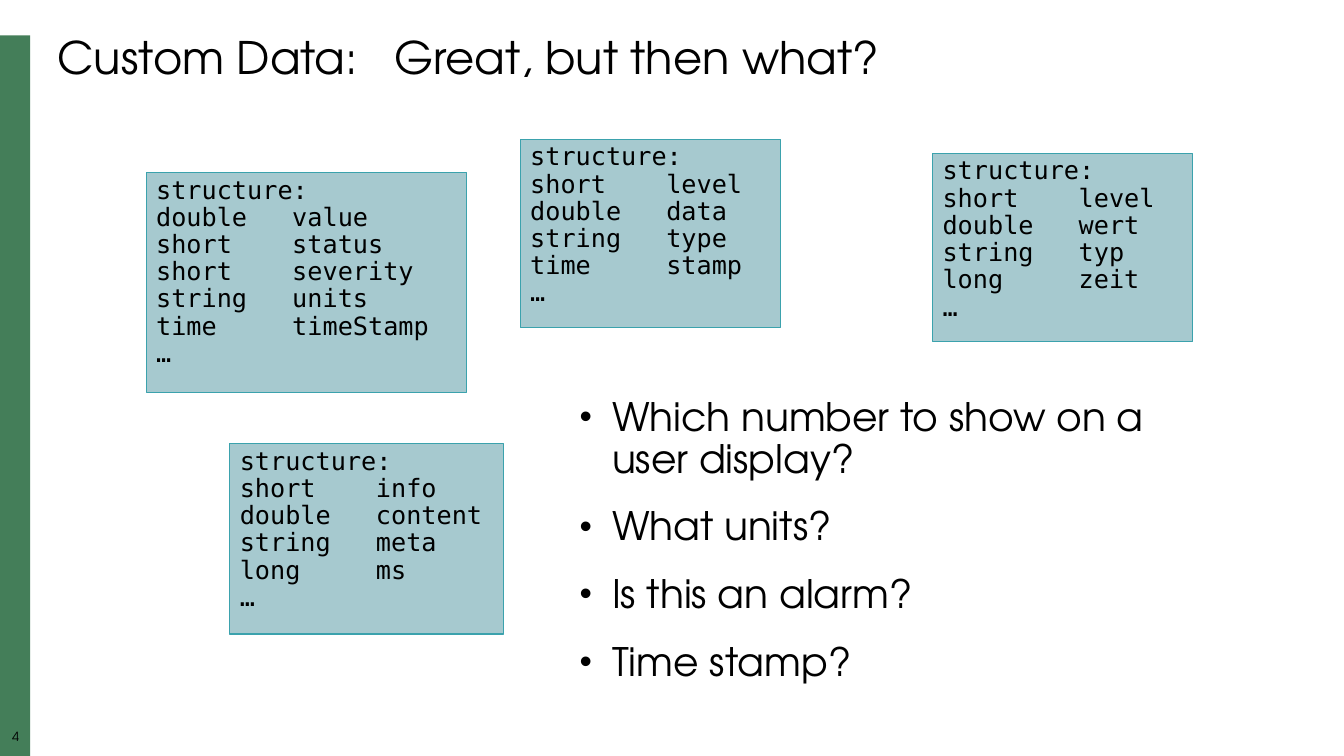
from dataclasses import dataclass
from typing import Optional

from lxml.etree import SubElement
from pptx import Presentation
from pptx.dml.color import RGBColor
from pptx.enum.shapes import MSO_SHAPE
from pptx.enum.text import MSO_ANCHOR as Anchor, MSO_AUTO_SIZE as AutoSize, PP_ALIGN as Align
from pptx.oxml.ns import qn
from pptx.util import Inches, Pt


@dataclass(frozen=True)
class Theme:
    text: str = "000000"
    band: str = "447E59"
    card_fill: str = "A6C9CF"
    card_line: str = "3BA2AD"
    sans: str = "TeX Gyre Adventor"
    mono: str = "DejaVu Sans Mono"
    title_size: int = 32
    list_size: int = 28
    code_size: int = 18
    number_size: int = 9


@dataclass(frozen=True)
class Box:
    left: float
    top: float
    width: float
    height: float

    def lengths(self) -> tuple:
        return tuple(Inches(n) for n in (self.left, self.top, self.width, self.height))


@dataclass(frozen=True)
class Structure:
    box: Box
    fields: tuple  # (type, name) pairs


THEME = Theme()
FIELD_COLUMN = 1.35
BULLET_INDENT = 0.32

STRUCTURES = (
    Structure(Box(1.45, 1.71, 3.18, 2.18),
              (("double", "value"), ("short", "status"), ("short", "severity"),
               ("string", "units"), ("time", "timeStamp"))),
    Structure(Box(5.16, 1.38, 2.58, 1.87),
              (("short", "level"), ("double", "data"), ("string", "type"), ("time", "stamp"))),
    Structure(Box(2.28, 4.4, 2.71, 1.89),
              (("short", "info"), ("double", "content"), ("string", "meta"), ("long", "ms"))),
    Structure(Box(9.25, 1.52, 2.58, 1.87),
              (("short", "level"), ("double", "wert"), ("string", "typ"), ("long", "zeit"))),
)
QUESTIONS = (
    "Which number to show on a user display?",
    "What units?",
    "Is this an alarm?",
    "Time stamp?",
)


def add_bullet(props) -> None:
    props.set("marL", str(Inches(BULLET_INDENT)))
    props.set("indent", str(-Inches(BULLET_INDENT)))
    SubElement(SubElement(props, qn("a:buClr")), qn("a:srgbClr"), val=THEME.text)
    SubElement(props, qn("a:buSzPct"), val="90000")
    SubElement(props, qn("a:buFont"), typeface="Arial")
    SubElement(props, qn("a:buChar"), char="•")


def write(frame, *texts: str, size: int, font: str = THEME.sans, align=Align.LEFT,
          bullets: bool = False, gap: int = 0, tab: Optional[float] = None,
          inset: Optional[float] = None) -> None:
    """Fill a text frame, one paragraph per text."""
    frame.word_wrap = True
    frame.auto_size = AutoSize.NONE
    frame.vertical_anchor = Anchor.TOP
    if inset is not None:
        frame.margin_left = frame.margin_right = Inches(inset)
        frame.margin_top = frame.margin_bottom = Inches(inset)
    for index, text in enumerate(texts):
        paragraph = frame.paragraphs[0] if index == 0 else frame.add_paragraph()
        paragraph.text = text
        paragraph.alignment = align
        paragraph.line_spacing = 0.9
        paragraph.space_before = Pt(gap if index else 0)
        props = paragraph._p.get_or_add_pPr()
        if bullets:
            add_bullet(props)
        if tab is not None:
            SubElement(SubElement(props, qn("a:tabLst")), qn("a:tab"),
                       pos=str(Inches(tab)), algn="l")
        for run in paragraph.runs:
            run.font.size = Pt(size)
            run.font.name = font
            run.font.color.rgb = RGBColor.from_string(THEME.text)
        # Line breaks carry the sans font, which sets the line height
        for line_break in paragraph._p.findall(qn("a:br")):
            break_props = SubElement(line_break, qn("a:rPr"), sz=str(size * 100))
            SubElement(break_props, qn("a:latin"), typeface=THEME.sans)


def add_panel(slide, box: Box, fill: str, line: Optional[str] = None):
    panel = slide.shapes.add_shape(MSO_SHAPE.RECTANGLE, *box.lengths())
    panel.shadow.inherit = False
    panel.fill.solid()
    panel.fill.fore_color.rgb = RGBColor.from_string(fill)
    if line:
        panel.line.color.rgb = RGBColor.from_string(line)
        panel.line.width = Pt(0.75)
    else:
        panel.line.fill.background()
    return panel


def add_structure(slide, structure: Structure) -> None:
    rows = [f"{kind}\t{name}" for kind, name in structure.fields]
    card = add_panel(slide, structure.box, THEME.card_fill, THEME.card_line)
    write(card.text_frame, "\v".join(["structure:", *rows, "…"]),
          size=THEME.code_size, font=THEME.mono, tab=FIELD_COLUMN)


def place(placeholder, box: Box) -> None:
    placeholder.left, placeholder.top, placeholder.width, placeholder.height = box.lengths()


def main() -> None:
    deck = Presentation()
    deck.slide_width, deck.slide_height = Inches(13.33), Inches(7.5)
    slide = deck.slides.add_slide(deck.slide_layouts[1])

    # Side band and slide number
    add_panel(slide, Box(0, 0.35, 0.3, 7.15), THEME.band)
    number = slide.shapes.add_textbox(*Box(0, 7.25, 0.31, 0.17).lengths())
    write(number.text_frame, "4", size=THEME.number_size, align=Align.CENTER, inset=0)

    # Title
    title = slide.shapes.title
    place(title, Box(0.47, 0.3, 12.5, 0.59))
    write(title.text_frame, "Custom Data:\tGreat, but then what?",
          size=THEME.title_size, tab=3.34)

    # Data structures
    for structure in STRUCTURES:
        add_structure(slide, structure)

    # Open questions
    questions = slide.placeholders[1]
    place(questions, Box(5.65, 3.89, 6.53, 3.1))
    write(questions.text_frame, *QUESTIONS, size=THEME.list_size, bullets=True, gap=18)

    deck.save("out.pptx")


if __name__ == "__main__":
    main()
